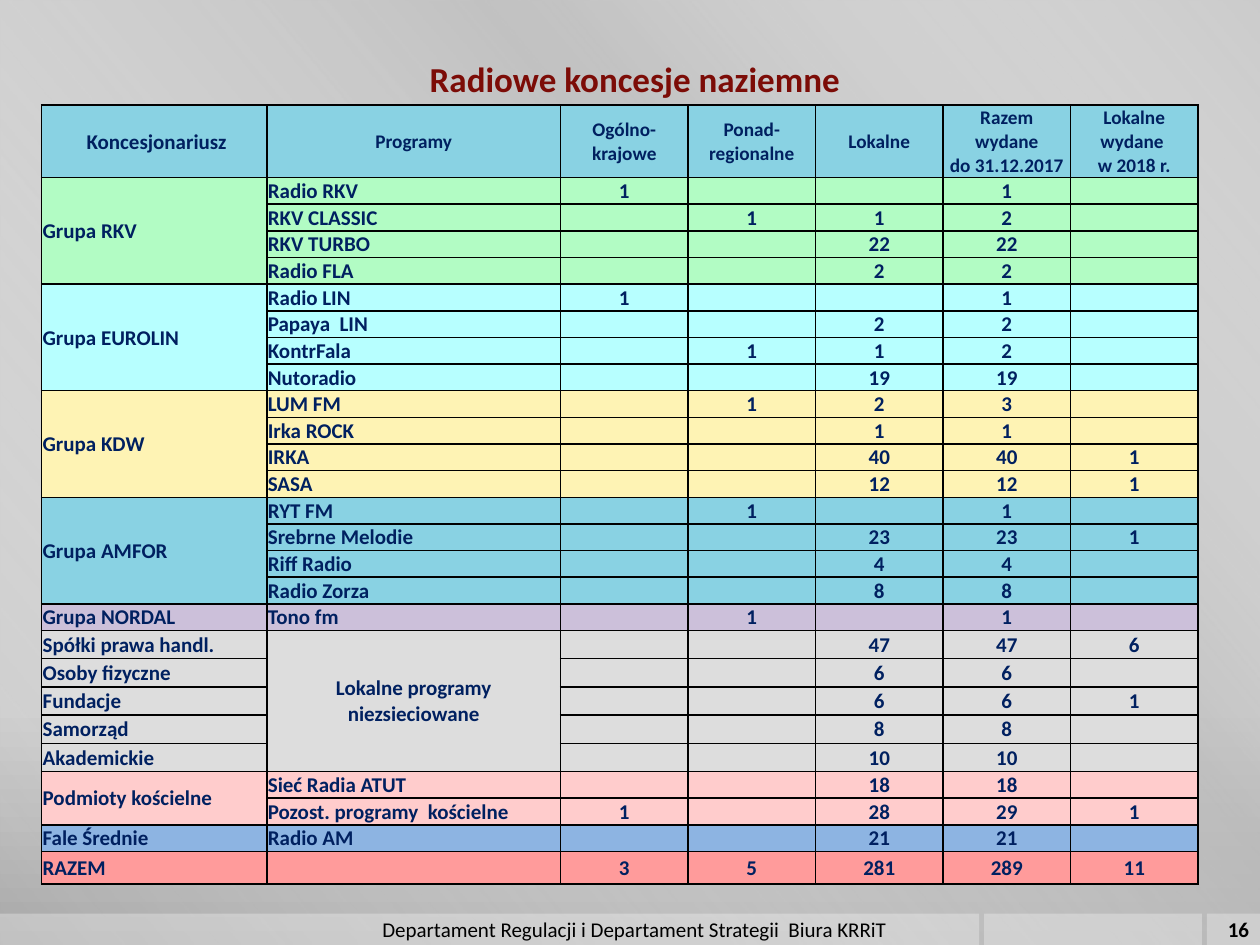
from pptx import Presentation
from pptx.dml.color import RGBColor
from pptx.enum.shapes import MSO_SHAPE
from pptx.enum.text import MSO_ANCHOR, PP_ALIGN
from pptx.oxml import parse_xml
from pptx.oxml.ns import nsdecls, qn
from pptx.util import Cm, Pt

FONT = "Calibri"
BLACK = RGBColor(0, 0, 0)
WHITE = RGBColor(0xFF, 0xFF, 0xFF)
MAROON = RGBColor(0x7C, 0x0C, 0x07)
NAVY = RGBColor(0x00, 0x20, 0x60)
TEAL = RGBColor(0x89, 0xD2, 0xE3)
GREEN = RGBColor(0xB2, 0xFC, 0xC4)
CYAN = RGBColor(0xB7, 0xFF, 0xFF)
YELLOW = RGBColor(0xFE, 0xF3, 0xB4)
VIOLET = RGBColor(0xCC, 0xC0, 0xDA)
GRAY = RGBColor(0xDD, 0xDD, 0xDD)
PINK = RGBColor(0xFF, 0xCC, 0xCC)
BLUE = RGBColor(0x8D, 0xB4, 0xE2)
RED = RGBColor(0xFF, 0x9B, 0x9B)

# Gradient stops: position %, colour, opacity %
BACKDROP = [(0, "CBCBCB", 100), (76, "C8C8C8", 100), (100, "A7A7A7", 100)]
SHEEN = [(0, "FFFFFF", 0), (34, "BFBFBF", 61), (38, "BFBFBF", 76), (100, "FFFFFF", 0)]

HEADINGS = ["\N{NO-BREAK SPACE}Koncesjonariusz", "Programy", "Ogólno-krajowe",
            "Ponad-\nregionalne", "Lokalne", "Razem\nwydane\ndo 31.12.2017",
            "Lokalne wydane \nw 2018 r."]
HEADINGS[0] = " Koncesjonariusz"
UNNETWORKED = "Lokalne programy niezsieciowane"

# Licensee, programme, national, supra-regional, local, issued in 2018, fill.
# None joins the cell to the one above.
LICENCES = [
    ("Grupa RKV", "Radio RKV", 1, 0, 0, 0, GREEN),
    (None, "RKV CLASSIC", 0, 1, 1, 0, GREEN),
    (None, "RKV TURBO", 0, 0, 22, 0, GREEN),
    (None, "Radio FLA", 0, 0, 2, 0, GREEN),
    ("Grupa EUROLIN", "Radio LIN", 1, 0, 0, 0, CYAN),
    (None, "Papaya  LIN", 0, 0, 2, 0, CYAN),
    (None, "KontrFala", 0, 1, 1, 0, CYAN),
    (None, "Nutoradio", 0, 0, 19, 0, CYAN),
    ("Grupa KDW", "LUM FM", 0, 1, 2, 0, YELLOW),
    (None, "Irka ROCK", 0, 0, 1, 0, YELLOW),
    (None, "IRKA", 0, 0, 40, 1, YELLOW),
    (None, "SASA", 0, 0, 12, 1, YELLOW),
    ("Grupa AMFOR", "RYT FM", 0, 1, 0, 0, TEAL),
    (None, "Srebrne Melodie", 0, 0, 23, 1, TEAL),
    (None, "Riff Radio", 0, 0, 4, 0, TEAL),
    (None, "Radio Zorza", 0, 0, 8, 0, TEAL),
    ("Grupa NORDAL", "Tono fm", 0, 1, 0, 0, VIOLET),
    ("Spółki prawa handl.", UNNETWORKED, 0, 0, 47, 6, GRAY),
    ("Osoby fizyczne", None, 0, 0, 6, 0, GRAY),
    ("Fundacje", None, 0, 0, 6, 1, GRAY),
    ("Samorząd", None, 0, 0, 8, 0, GRAY),
    ("Akademickie", None, 0, 0, 10, 0, GRAY),
    ("Podmioty kościelne", "Sieć Radia ATUT", 0, 0, 18, 0, PINK),
    (None, "Pozost. programy  kościelne", 1, 0, 28, 1, PINK),
    ("Fale Średnie", "Radio AM", 0, 0, 21, 0, BLUE),
]
COLUMN_WIDTHS = [4.54, 5.92] + [2.57] * 5
ROW_HEIGHTS = [1.46] + [0.53] * 17 + [0.57] * 5 + [0.53] * 3 + [0.66]


def set_gradient(fill, owner, stops, angle):
    fill.gradient()
    fill.gradient_angle = 360 - angle
    stop_list = next(owner.iter(qn("a:gsLst")))
    stop_list.clear()
    for position, color, opacity in stops:
        stop_list.append(parse_xml(
            f'<a:gs {nsdecls("a")} pos="{position * 1000}"><a:srgbClr val="{color}">'
            f'<a:alpha val="{opacity * 1000}"/></a:srgbClr></a:gs>'))


def add_panel(slide, left, top, width, height):
    panel = slide.shapes.add_shape(MSO_SHAPE.RECTANGLE, Cm(left), Cm(top), Cm(width), Cm(height))
    panel.shadow.inherit = False
    panel.line.fill.background()
    return panel


def add_footer_bar(slide, left, width):
    bar = add_panel(slide, left, 18.42, width, 0.63)
    bar.fill.solid()
    bar.fill.fore_color.rgb = WHITE
    color = next(bar.element.spPr.iter(qn("a:srgbClr")))
    color.append(parse_xml(f'<a:alpha {nsdecls("a")} val="30000"/>'))


def write(paragraph, text, size, color, bold=False, align=PP_ALIGN.CENTER):
    paragraph.alignment = align
    for index, line in enumerate(text.split("\n")):
        if index:
            paragraph.add_line_break()
        run = paragraph.add_run()
        run.text = line
        run.font.name = FONT
        run.font.size = Pt(size)
        run.font.bold = bold
        run.font.color.rgb = color


def add_label(slide, left, top, width, height, text, bold=False):
    frame = slide.shapes.add_textbox(Cm(left), Cm(top), Cm(width), Cm(height)).text_frame
    frame.word_wrap = True
    frame.vertical_anchor = MSO_ANCHOR.MIDDLE
    write(frame.paragraphs[0], text, 12, BLACK, bold)


def format_cell(cell, color):
    cell.fill.solid()
    cell.fill.fore_color.rgb = color
    cell.margin_left = cell.margin_right = cell.margin_top = Cm(0.02)
    cell.margin_bottom = 0
    cell.vertical_anchor = MSO_ANCHOR.MIDDLE
    properties = cell._tc.get_or_add_tcPr()
    for index, side in enumerate(("lnL", "lnR", "lnT", "lnB")):
        properties.insert(index, parse_xml(
            f'<a:{side} {nsdecls("a")} w="12700"><a:solidFill>'
            f'<a:srgbClr val="{BLACK}"/></a:solidFill></a:{side}>'))


def fill_cell(cell, text, color, size=12, align=PP_ALIGN.CENTER):
    format_cell(cell, color)
    paragraph = cell.text_frame.paragraphs[0]
    if text:
        write(paragraph, text, size, NAVY, True, align)
    else:
        # Keeps empty cells from stretching the row
        paragraph._p.append(parse_xml(f'<a:endParaRPr {nsdecls("a")} sz="1200"/>'))


def merge_joined(table, column):
    start = 0
    names = [licence[column] for licence in LICENCES] + [""]
    for row, name in enumerate(names):
        if name is not None:
            if row - start > 1:
                table.cell(start + 1, column).merge(table.cell(row, column))
            start = row


def add_licence_table(slide):
    table = slide.shapes.add_table(
        len(ROW_HEIGHTS), len(COLUMN_WIDTHS), Cm(0.84), Cm(2.12),
        Cm(sum(COLUMN_WIDTHS)), Cm(sum(ROW_HEIGHTS))).table
    table.first_row = table.horz_banding = False
    for column, width in zip(table.columns, COLUMN_WIDTHS):
        column.width = Cm(width)
    for row, height in zip(table.rows, ROW_HEIGHTS):
        row.height = Cm(height)

    for column, heading in enumerate(HEADINGS):
        fill_cell(table.cell(0, column), heading, TEAL, 11 if column else 12)

    totals = [sum(licence[i] for licence in LICENCES) for i in range(2, 6)]
    body = LICENCES + [("RAZEM", "", *totals, RED)]
    for row, (licensee, program, national, regional, local, recent, color) in enumerate(body, 1):
        issued = national + regional + local
        counts = [str(n or "") for n in (national, regional, local, issued, recent)]
        for column, text in enumerate([licensee, program, *counts]):
            left = column < 2 and text != UNNETWORKED
            fill_cell(table.cell(row, column), text, color,
                      align=PP_ALIGN.LEFT if left else PP_ALIGN.CENTER)
    for column in (0, 1):
        merge_joined(table, column)


def add_title(slide, text):
    title = slide.shapes.title
    title.left, title.top, title.width, title.height = Cm(1.27), Cm(0.84), Cm(23.06), Cm(1.47)
    # Bring the title in front of the backdrop
    title.element.getparent().append(title.element)
    frame = title.text_frame
    frame.margin_left = frame.margin_right = 0
    frame.vertical_anchor = MSO_ANCHOR.MIDDLE
    write(frame.paragraphs[0], text, 20, MAROON, True)


def main():
    deck = Presentation()
    deck.slide_width, deck.slide_height = Cm(25.4), Cm(19.05)
    slide = deck.slides.add_slide(deck.slide_layouts[5])

    # Backdrop and footer bars
    set_gradient(slide.background.fill, slide.element, BACKDROP, 90)
    sheen = add_panel(slide, 0, 0, 25.4, 19.05)
    set_gradient(sheen.fill, sheen.element, SHEEN, 140)
    for left, width in ((24.33, 1.07), (19.84, 4.39), (0, 19.74)):
        add_footer_bar(slide, left, width)

    # Title and table
    add_title(slide, "Radiowe koncesje naziemne")
    add_licence_table(slide)

    # Footer
    add_label(slide, 24.33, 18.42, 1.27, 0.63, "16", bold=True)
    add_label(slide, 6.98, 18.36, 11.63, 0.74,
              "Departament Regulacji i Departament Strategii  Biura KRRiT")
    deck.save("out.pptx")


if __name__ == "__main__":
    main()
